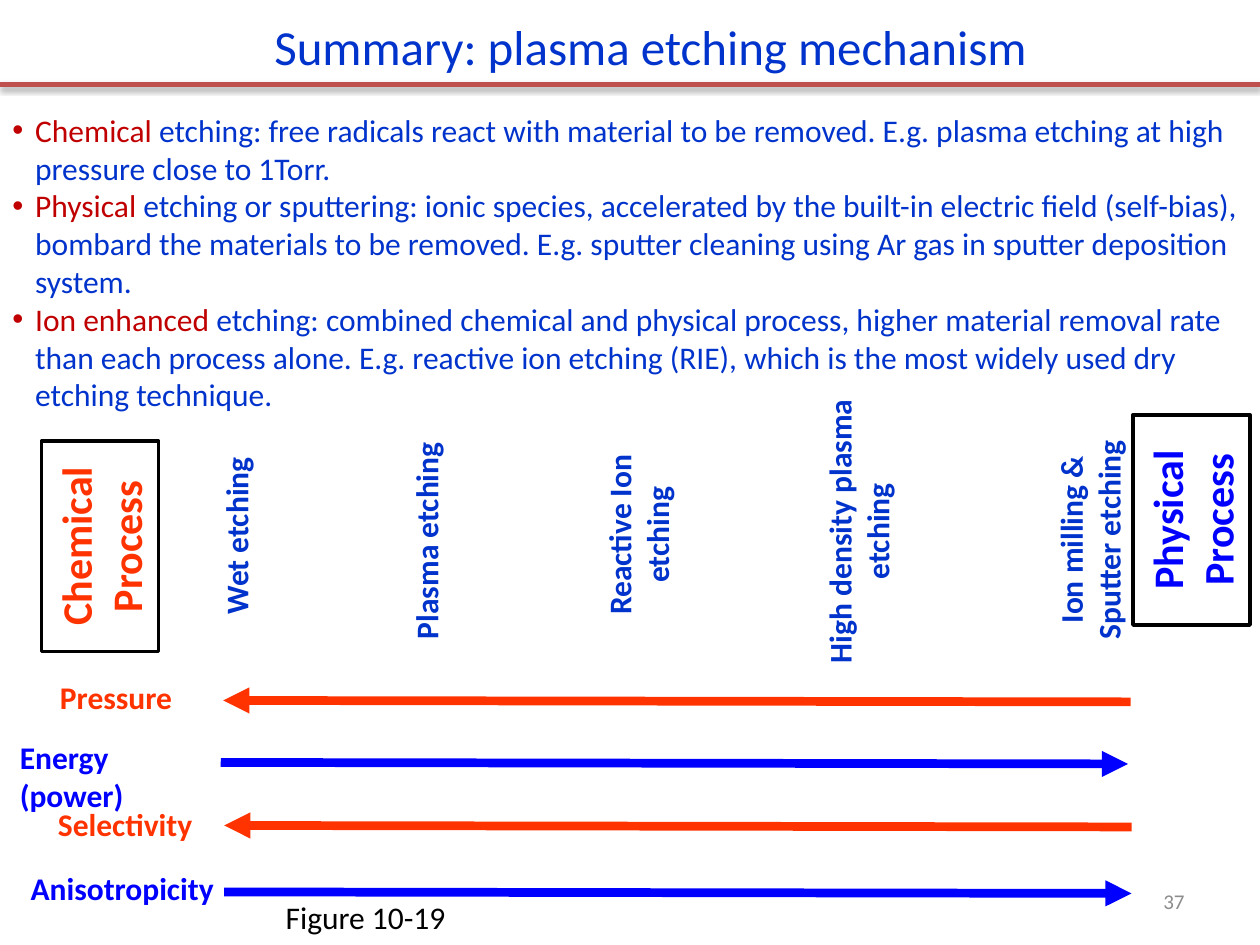
from lxml import etree
from pptx import Presentation
from pptx.dml.color import RGBColor as RGB
from pptx.enum.shapes import MSO_CONNECTOR as Conn, MSO_SHAPE as Shape
from pptx.enum.text import MSO_ANCHOR as Anchor, PP_ALIGN as Align
from pptx.oxml import parse_xml
from pptx.oxml.ns import nsdecls, qn
from pptx.util import Cm, Pt

BLUE, PURE, RED, DARK = "0033CC", "0000FF", "FF3300", "C00000"


def color(code):
    return RGB.from_string(code)


def add_run(para, text, size, code, bold=False):
    run = para.add_run()
    run.text = text
    font = run.font
    font.name, font.size, font.bold = "Calibri", Pt(size), bold
    font.color.rgb = color(code)


def add_text(slide, box, text, size, code, bold=False, align=Align.CENTER, wrap=True):
    part = slide.shapes.add_textbox(*map(Cm, box))
    part.text_frame.word_wrap = wrap
    para = part.text_frame.paragraphs[0]
    para.alignment = align
    add_run(para, text, size, code, bold)
    return part


def add_line(slide, start, end, code, width):
    line = slide.shapes.add_connector(Conn.STRAIGHT, *map(Cm, start + end))
    line.line.color.rgb = color(code)
    line.line.width = Pt(width)
    effect = etree.SubElement(line._element.spPr, qn("a:effectLst"))
    return line, effect


def turned(mid_x, mid_y, length, depth):
    """Box that, turned upright, is centred on the given point."""
    return mid_x - length / 2, mid_y - depth / 2, length, depth


def add_head(slide, box):
    left, top, width, height = box
    _, effect = add_line(slide, (left, top + height), (left + width, top + height),
                         "C0504D", 3)
    effect.append(parse_xml(
        f'<a:outerShdw {nsdecls("a")} blurRad="39370" dist="20320" dir="5400000" '
        'rotWithShape="0"><a:srgbClr val="000000"><a:alpha val="38000"/>'
        '</a:srgbClr></a:outerShdw>'))
    add_text(slide, (left + 5.28, top + 0.2, 15.85, 1.45),
             "Summary: plasma etching mechanism", 28, BLUE,
             align=Align.LEFT, wrap=False)


def add_points(slide, box, points):
    frame = slide.shapes.add_textbox(*map(Cm, box)).text_frame
    frame.word_wrap = True
    for i, (term, rest) in enumerate(points):
        para = frame.add_paragraph() if i else frame.paragraphs[0]
        props = para._p.get_or_add_pPr()
        props.set("marL", str(Cm(0.46)))
        props.set("indent", str(-Cm(0.46)))
        etree.SubElement(props, qn("a:buFont"), typeface="Arial")
        etree.SubElement(props, qn("a:buChar"), char="•")
        add_run(para, term, 18, DARK)
        add_run(para, rest, 18, BLUE)


def add_scale(slide, box, ends, stages):
    left, top, _, _ = box
    # Framed end points
    for text, x, y, code in ends:
        place = turned(left + x, top + y, 4.24, 2.36)
        frame = slide.shapes.add_shape(Shape.RECTANGLE, *map(Cm, place))
        frame.rotation = 270
        frame.shadow.inherit = False
        frame.fill.background()
        frame.line.color.rgb = color("000000")
        frame.line.width = Pt(2)
        para = frame.text_frame.paragraphs[0]
        para.alignment = Align.CENTER
        add_run(para, text, 24, code, True)
    # Upright stage names
    for text, x, y, length, depth in stages:
        place = turned(left + x, top + y, length, depth)
        add_text(slide, place, text, 18, BLUE, True).rotation = 270


def add_trends(slide, box, trends):
    left, top, width, _ = box
    for text, x, y, span, line_x, line_y, code, align in trends:
        # Falling trends point left, rising ones right
        tip = "tailEnd" if code == RED else "headEnd"
        start = left + line_x, top + line_y
        line, _ = add_line(slide, (start[0] + width, start[1] + 0.03), start, code, 5)
        etree.SubElement(line.line._get_or_add_ln(), qn(f"a:{tip}"), type="triangle")
        add_text(slide, (x, top + y, span, 1.02), text, 18, code, True, align)


def add_foot(slide, box):
    left, top, width, height = box
    add_text(slide, (left, top + 0.33, 3.78, height), "Figure 10-19", 18, "000000",
             align=Align.LEFT, wrap=False)
    page = add_text(slide, (left + width - 5.92, top, 5.92, height), "37", 12,
                    "8C8C8C", align=Align.RIGHT)
    page.text_frame.vertical_anchor = Anchor.MIDDLE


POINTS = [
    ("Chemical", " etching: free radicals react with material to be removed. "
     "E.g. plasma etching at high pressure close to 1Torr."),
    ("Physical", " etching or sputtering: ionic species, accelerated by the built-in "
     "electric field (self-bias), bombard the materials to be removed. "
     "E.g. sputter cleaning using Ar gas in sputter deposition system."),
    ("Ion enhanced ", "etching: combined chemical and physical process, higher material "
     "removal rate than each process alone. E.g. reactive ion etching (RIE), which is "
     "the most widely used dry etching technique."),
]
# Text, centre x and y, colour
ENDS = [("Chemical Process", 2.02, 3.01, RED), ("Physical Process", 24.02, 2.48, PURE)]
# Text, centre x and y, length, depth
STAGES = [
    ("Wet etching", 4.76, 2.8, 4.6, 1.02),
    ("Plasma etching", 8.59, 2.9, 5.23, 1.02),
    ("Reactive Ion etching", 12.87, 2.78, 4.6, 1.8),
    ("High density plasma etching", 17.31, 2.71, 6.17, 1.8),
    ("Ion milling & Sputter etching", 21.97, 2.88, 5.69, 1.8),
]
# Text, label x, y and width, line x and y, colour, alignment
TRENDS = [
    ("Pressure", 0.56, 0.04, 3.56, 0.05, 0.62, RED, Align.CENTER),
    ("Selectivity", 0.43, 2.6, 4.19, 0.07, 3.14, RED, Align.CENTER),
    ("Energy (power)", 0.15, 1.26, 4.45, 0, 1.87, PURE, Align.LEFT),
    ("Anisotropicity", 0, 3.9, 4.93, 0.07, 4.48, PURE, Align.CENTER),
]


def main():
    deck = Presentation()
    deck.slide_width, deck.slide_height = Cm(25.4), Cm(19.05)
    slide = deck.slides.add_slide(deck.slide_layouts[6])
    add_scale(slide, (0, 8, 25.4, 5.5), ENDS, STAGES)
    add_trends(slide, (4.45, 13.5, 18.29, 5), TRENDS)
    add_head(slide, (0, 0, 25.4, 1.7))
    add_points(slide, (0, 2.11, 25.4, 6.4), POINTS)
    add_foot(slide, (5.51, 17.65, 18.62, 1.02))
    deck.save("out.pptx")


if __name__ == "__main__":
    main()
